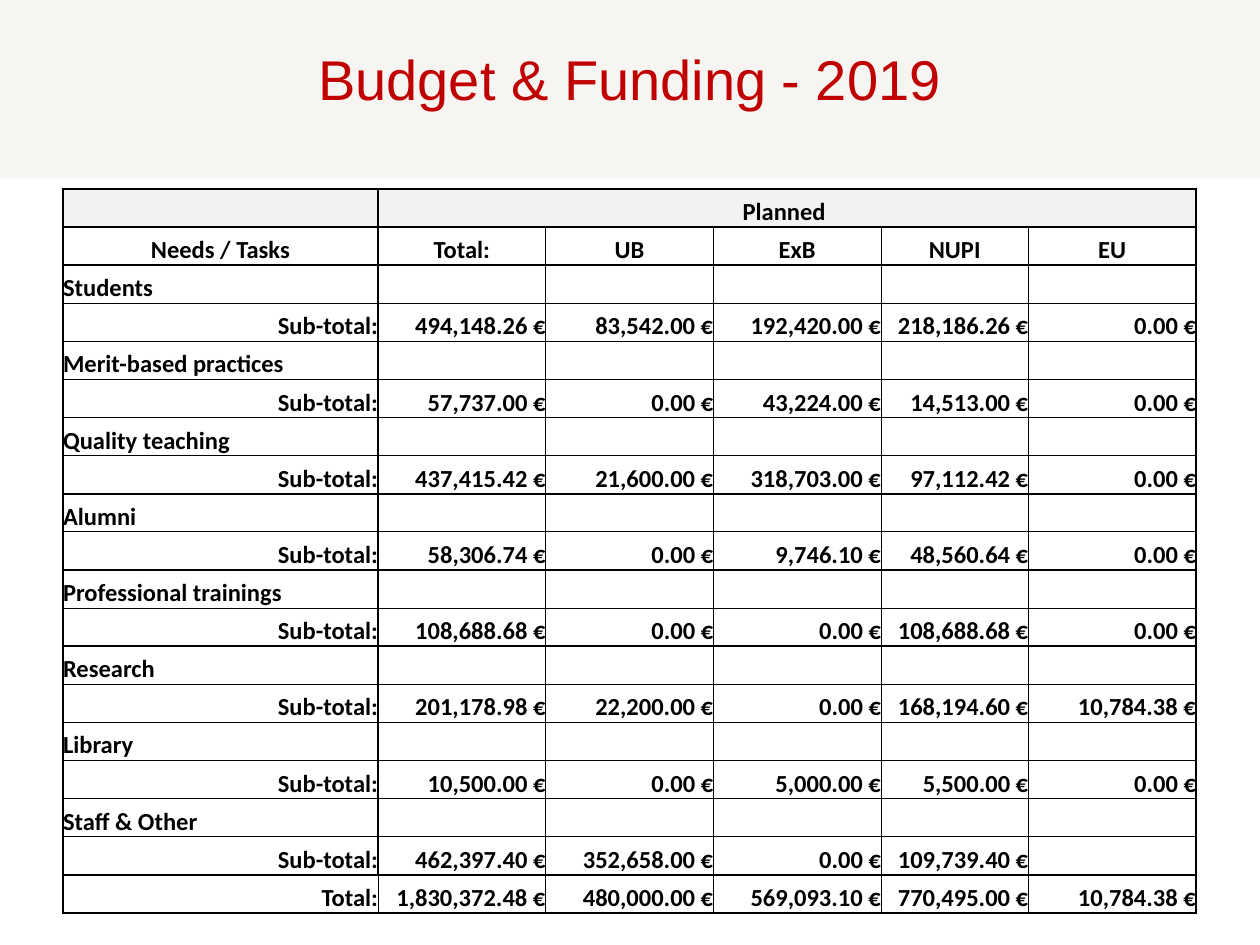
from lxml import etree
from pptx import Presentation
from pptx import util as u
from pptx.dml.color import RGBColor
from pptx.enum import shapes, text
from pptx.oxml import ns

RED = RGBColor(0xC0, 0x00, 0x00)
BLACK = RGBColor(0x00, 0x00, 0x00)
WHITE = RGBColor(0xFF, 0xFF, 0xFF)
GREY = RGBColor(0xF2, 0xF2, 0xF2)
CREAM = RGBColor(0xF6, 0xF5, 0xF1)

LEFT, CENTER, RIGHT = text.PP_ALIGN.LEFT, text.PP_ALIGN.CENTER, text.PP_ALIGN.RIGHT
THIN, THICK = 0.5, 1

FUNDERS = ["Needs / Tasks", "Total:", "UB", "ExB", "NUPI", "EU"]
NEEDS = [
    ("Students", ["494,148.26", "83,542.00", "192,420.00", "218,186.26", "0.00"]),
    ("Merit-based practices", ["57,737.00", "0.00", "43,224.00", "14,513.00", "0.00"]),
    ("Quality teaching", ["437,415.42", "21,600.00", "318,703.00", "97,112.42", "0.00"]),
    ("Alumni", ["58,306.74", "0.00", "9,746.10", "48,560.64", "0.00"]),
    ("Professional trainings", ["108,688.68", "0.00", "0.00", "108,688.68", "0.00"]),
    ("Research", ["201,178.98", "22,200.00", "0.00", "168,194.60", "10,784.38"]),
    ("Library", ["10,500.00", "0.00", "5,000.00", "5,500.00", "0.00"]),
    ("Staff & Other", ["462,397.40", "352,658.00", "0.00", "109,739.40", ""]),
]
TOTALS = ["1,830,372.48", "480,000.00", "569,093.10", "770,495.00", "10,784.38"]
COLUMN_WIDTHS = [6.35, 3.38, 3.38, 3.38, 2.97, 3.38]
TABLE_HEIGHT = 14.6


def write(frame, words, font="Calibri", size=14, color=BLACK, bold=False, align=LEFT):
    paragraph = frame.paragraphs[0]
    paragraph.alignment = align
    if not words:
        etree.SubElement(paragraph._p, ns.qn("a:endParaRPr"), sz=str(size * 100))
        return
    run = paragraph.add_run()
    run.text = words
    run.font.name = font
    run.font.size = u.Pt(size)
    run.font.bold = bold
    run.font.color.rgb = color


def euros(label, amounts):
    return [label] + [f"{amount} €" if amount else "" for amount in amounts]


def budget_rows():
    rows = [["", "Planned ", "", "", "", ""], FUNDERS]
    for need, amounts in NEEDS:
        rows += [[need, "", "", "", "", ""], euros("Sub-total:", amounts)]
    return rows + [euros("Total:", TOTALS)]


def border(cell, **widths):
    properties = cell._tc.get_or_add_tcPr()
    for side in "LRTB":
        line = etree.SubElement(properties, ns.qn(f"a:ln{side}"), w=str(u.Pt(widths[side])))
        fill = etree.SubElement(line, ns.qn("a:solidFill"))
        etree.SubElement(fill, ns.qn("a:srgbClr"), val=str(BLACK))


class BudgetSlide:
    def __init__(self, deck):
        self.slide = deck.slides.add_slide(deck.slide_layouts[5])

    def band(self, height):
        band = self.slide.shapes.add_shape(
            shapes.MSO_SHAPE.RECTANGLE, 0, 0, u.Cm(25.4), u.Cm(height))
        band.shadow.inherit = False
        band.fill.solid()
        band.fill.fore_color.rgb = CREAM
        band.line.fill.background()
        self.slide.shapes._spTree.insert(2, band._element)

    def title(self, words):
        title = self.slide.shapes.title
        title.left, title.top = u.Cm(1.27), u.Cm(0.76)
        title.width, title.height = u.Cm(22.86), u.Cm(3.18)
        title.text_frame.vertical_anchor = text.MSO_ANCHOR.TOP
        write(title.text_frame, words, font="Arial", size=32, color=RED, align=CENTER)

    def table(self, rows):
        table = self.slide.shapes.add_table(
            len(rows), len(COLUMN_WIDTHS), u.Cm(1.27), u.Cm(3.81),
            u.Cm(sum(COLUMN_WIDTHS)), u.Cm(TABLE_HEIGHT)).table
        table.first_row = table.horz_banding = False
        for column, width in zip(table.columns, COLUMN_WIDTHS):
            column.width = u.Cm(width)
        table.cell(0, 1).merge(table.cell(0, len(COLUMN_WIDTHS) - 1))
        for r, row in enumerate(rows):
            table.rows[r].height = u.Cm(TABLE_HEIGHT / len(rows))
            for c, words in enumerate(row):
                self.cell(table.cell(r, c), words, r, c, len(rows) - 1)

    def cell(self, cell, words, r, c, last_row):
        is_need = 2 <= r < last_row and r % 2 == 0
        is_amount = r > 2 and not is_need
        last_column = len(COLUMN_WIDTHS) - 1
        inner = THIN if r == last_row else THICK
        cell.margin_left = cell.margin_right = cell.margin_top = cell.margin_bottom = 0
        cell.vertical_anchor = text.MSO_ANCHOR.BOTTOM
        border(cell,
               L=THICK if c == 0 else inner if c <= 2 else THIN,
               R=THICK if c == last_column else inner if c <= 1 else THIN,
               T=THIN if is_amount and r < last_row else THICK,
               B=THIN if is_need else THICK)
        cell.fill.solid()
        cell.fill.fore_color.rgb = WHITE if r else GREY
        align = LEFT if is_need else RIGHT if is_amount else CENTER
        write(cell.text_frame, words, bold=True, align=align)


def main():
    deck = Presentation()
    deck.slide_width, deck.slide_height = u.Cm(25.4), u.Cm(19.05)
    budget = BudgetSlide(deck)
    budget.band(3.6)
    budget.title("Budget & Funding - 2019")
    budget.table(budget_rows())
    deck.save("out.pptx")


if __name__ == "__main__":
    main()
